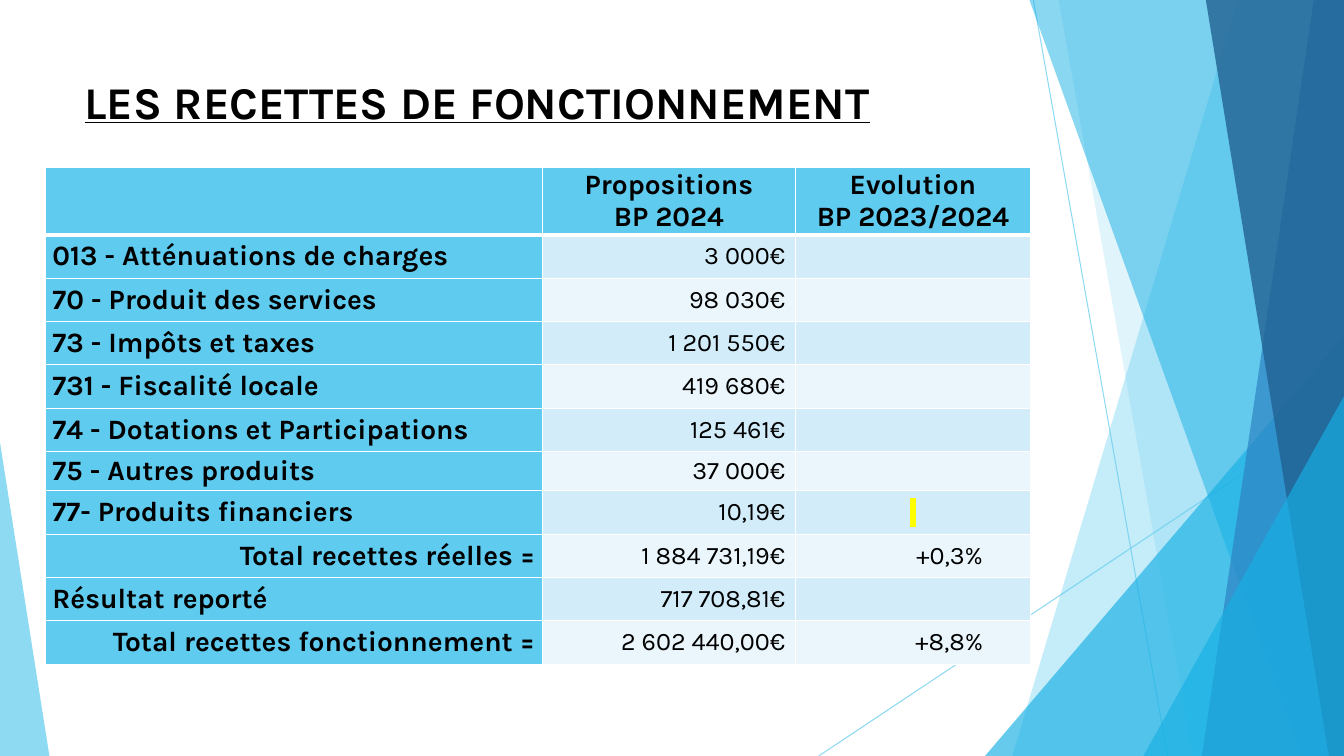
import lxml.etree
import pptx
import pptx.dml.color
import pptx.enum.shapes
import pptx.enum.text
import pptx.oxml.ns
import pptx.util

Inches = pptx.util.Inches
Pt = pptx.util.Pt
ALIGN = pptx.enum.text.PP_ALIGN
ANCHOR = pptx.enum.text.MSO_ANCHOR
SHAPE = pptx.enum.shapes.MSO_SHAPE

COLORS = {
    "sky": "5FCBEF", "cyan": "17B0E4", "blue": "2E83C3", "navy": "226292",
    "band_dark": "D2ECF9", "band_light": "EAF6FC",
    "black": "000000", "white": "FFFFFF", "yellow": "FFFF00",
}
FONT = "Karla"
TITLE_FORMAT = {"size": Pt(32.4), "bold": True, "underline": True}
LABEL_FORMAT = {"size": Pt(20), "bold": True}
VALUE_FORMAT = {"size": Pt(18), "bold": False}

HEADERS = ["", "Propositions\nBP 2024", "Evolution\nBP 2023/2024"]
HIGHLIGHTED_SPACE = chr(160)
RECEIPTS = [
    ("013 - Atténuations de charges", "3 000€", ""),
    ("70 - Produit des services", "98 030€", ""),
    ("73 - Impôts et taxes", "1 201 550€", ""),
    ("731 - Fiscalité locale", "419 680€", ""),
    ("74 - Dotations et Participations", "125 461€", ""),
    ("75 - Autres produits", "37 000€", ""),
    ("77- Produits financiers", "10,19€", HIGHLIGHTED_SPACE),
    ("Total recettes réelles =", "1 884 731,19€", "+0,3%"),
    ("Résultat reporté", "717 708,81€", ""),
    ("Total recettes fonctionnement =", "2 602 440,00€", "+8,8%"),
]
COLUMN_WIDTHS = [4.93, 2.51, 2.33]
HEADER_HEIGHT, ROW_HEIGHT, SHORT_ROW_HEIGHT = 0.67, 0.43, 0.39
SHORT_ROW = 6


def rgb(name):
    return pptx.dml.color.RGBColor.from_string(COLORS[name])


def add_element(parent, tag, **attributes):
    return lxml.etree.SubElement(parent, pptx.oxml.ns.qn(tag), attributes)


def set_alpha(shape, percent):
    for color in shape._element.spPr.iter(pptx.oxml.ns.qn("a:srgbClr")):
        add_element(color, "a:alpha", val=str(percent * 1000))


def write_text(frame, text, text_format, alignment):
    for index, line in enumerate(text.split("\n")):
        paragraph = frame.paragraphs[0] if index == 0 else frame.add_paragraph()
        paragraph.alignment = alignment
        run = paragraph.add_run()
        run.text = line
        run.font.color.rgb = rgb("black")
        for name, value in {"name": FONT, **text_format}.items():
            setattr(run.font, name, value)


# Background facets
def add_line(slide, start, end):
    line = slide.shapes.add_connector(
        pptx.enum.shapes.MSO_CONNECTOR.STRAIGHT, *map(Inches, start + end))
    line.line.color.rgb = rgb("sky")
    line.line.width = Pt(0.75)
    set_alpha(line, 70)
    add_element(line._element.spPr, "a:effectLst")


def finish_facet(shape, color, alpha):
    shape.shadow.inherit = False
    shape.fill.solid()
    shape.fill.fore_color.rgb = rgb(color)
    shape.line.fill.background()
    set_alpha(shape, alpha)


def add_band(slide, box, top_x, bottom_x, color, alpha):
    left, top, width, height = box
    right, bottom = left + width, top + height
    corners = [(left + top_x, top), (right, top),
               (right, bottom), (left + bottom_x, bottom)]
    points = [(Inches(x), Inches(y)) for x, y in corners]
    builder = slide.shapes.build_freeform(*points[0])
    builder.add_line_segments(points[1:], close=True)
    finish_facet(builder.convert_to_shape(), color, alpha)


def add_triangle(slide, box, start_x, width, height, apex, color, alpha):
    left, top, _, box_height = box
    triangle = slide.shapes.add_shape(
        SHAPE.ISOSCELES_TRIANGLE, Inches(left + start_x),
        Inches(top + box_height - height), Inches(width), Inches(height))
    triangle.adjustments[0] = apex
    finish_facet(triangle, color, alpha)


def add_facets(slide, box):
    left, top, width, height = box
    right, bottom = left + width, top + height
    add_line(slide, (left + 10.25, top), (left + 11.58, bottom))
    add_line(slide, (right, top + 4.03), (left + 8.12, bottom))
    add_band(slide, box, 12.28, 10.04, "sky", 36)
    add_band(slide, box, 10.5, 11.83, "sky", 20)
    add_triangle(slide, box, 9.77, 3.56, 4.17, 1, "cyan", 66)
    add_band(slide, box, 10.21, 12.91, "cyan", 50)
    add_band(slide, box, 13.03, 11.92, "blue", 70)
    add_band(slide, box, 11.96, 13.18, "navy", 80)
    add_triangle(slide, box, 11.34, 1.99, 3.57, 1, "cyan", 66)
    add_triangle(slide, box, 0, 0.49, 3.11, 0, "sky", 70)


# Title
def add_title(slide, box):
    frame = slide.shapes.add_textbox(*map(Inches, box)).text_frame
    frame.word_wrap = True
    frame.vertical_anchor = ANCHOR.TOP
    write_text(frame, "LES RECETTES DE FONCTIONNEMENT", TITLE_FORMAT, ALIGN.LEFT)


# Table of receipts
def set_borders(cell, bottom_width):
    properties = cell._tc.get_or_add_tcPr()
    widths = {"a:lnL": 1, "a:lnR": 1, "a:lnT": 1, "a:lnB": bottom_width}
    for position, (tag, width) in enumerate(widths.items()):
        border = add_element(properties, tag, w=str(Pt(width)))
        fill = add_element(border, "a:solidFill")
        add_element(fill, "a:srgbClr", val=COLORS["white"])
        properties.insert(position, border)


def fill_cell(cell, text, color, text_format, alignment,
              right_margin=0.07, bottom_width=1):
    margins = {"margin_left": 0.07, "margin_right": right_margin,
               "margin_top": 0, "margin_bottom": 0}
    for name, value in margins.items():
        setattr(cell, name, Inches(value))
    cell.vertical_anchor = ANCHOR.MIDDLE
    cell.fill.solid()
    cell.fill.fore_color.rgb = rgb(color)
    set_borders(cell, bottom_width)
    if text:
        write_text(cell.text_frame, text, text_format, alignment)


def highlight(cell):
    properties = cell.text_frame.paragraphs[0].runs[0].font._element
    mark = add_element(properties, "a:highlight")
    add_element(mark, "a:srgbClr", val=COLORS["yellow"])
    properties.find(pptx.oxml.ns.qn("a:solidFill")).addnext(mark)


def add_receipts_table(slide, left, top):
    heights = [HEADER_HEIGHT] + [ROW_HEIGHT] * len(RECEIPTS)
    heights[SHORT_ROW] = SHORT_ROW_HEIGHT
    table = slide.shapes.add_table(
        len(heights), len(COLUMN_WIDTHS), Inches(left), Inches(top),
        Inches(sum(COLUMN_WIDTHS)), Inches(sum(heights))).table
    for column, width in zip(table.columns, COLUMN_WIDTHS):
        column.width = Inches(width)
    for row, height in zip(table.rows, heights):
        row.height = Inches(height)

    for index, header in enumerate(HEADERS):
        fill_cell(table.cell(0, index), header, "sky", LABEL_FORMAT,
                  ALIGN.CENTER, bottom_width=3)
    for row, (label, amount, change) in enumerate(RECEIPTS, start=1):
        band = "band_dark" if row % 2 else "band_light"
        label_side = ALIGN.RIGHT if label.startswith("Total") else ALIGN.LEFT
        fill_cell(table.cell(row, 0), label, "sky", LABEL_FORMAT, label_side)
        fill_cell(table.cell(row, 1), amount, band, VALUE_FORMAT, ALIGN.RIGHT, 0.1)
        change_cell = table.cell(row, 2)
        if change == HIGHLIGHTED_SPACE:
            fill_cell(change_cell, change, band, VALUE_FORMAT, ALIGN.CENTER)
            highlight(change_cell)
        else:
            fill_cell(change_cell, change, band, VALUE_FORMAT, ALIGN.RIGHT, 0.47)


def main():
    presentation = pptx.Presentation()
    presentation.slide_width = Inches(13.33)
    presentation.slide_height = Inches(7.5)
    slide = presentation.slides.add_slide(presentation.slide_layouts[6])
    add_facets(slide, (0, 0, 13.33, 7.5))
    add_title(slide, (0.74, 0.69, 9.4, 1.13))
    add_receipts_table(slide, 0.45, 1.66)
    presentation.save("out.pptx")


if __name__ == "__main__":
    main()
